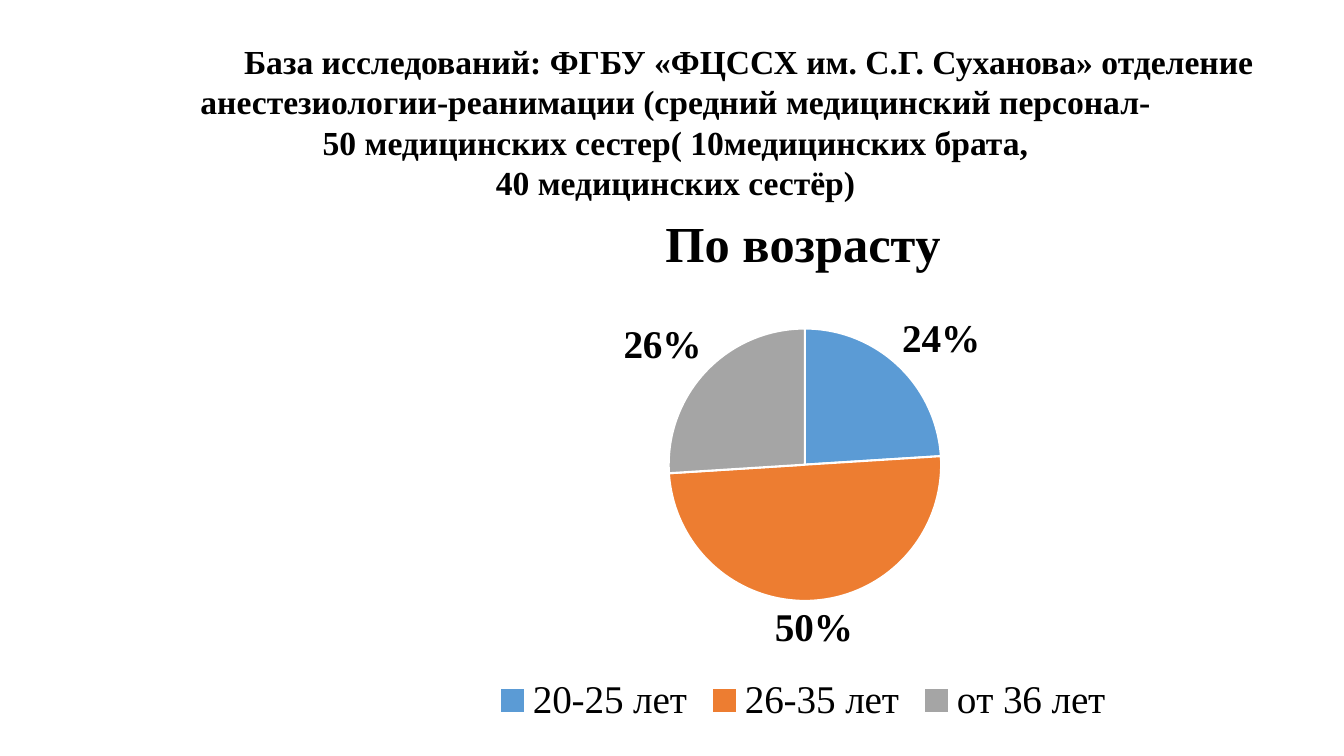
from pptx import Presentation
from pptx.chart.data import CategoryChartData
from pptx.dml.color import RGBColor
from pptx.enum.chart import XL_CHART_TYPE as ChartType
from pptx.enum.chart import XL_LABEL_POSITION as LabelPos
from pptx.enum.chart import XL_LEGEND_POSITION as LegendPos
from pptx.enum.text import MSO_ANCHOR, MSO_AUTO_SIZE, PP_ALIGN
from pptx.util import Inches, Pt

BLACK = RGBColor(0x00, 0x00, 0x00)
WHITE = RGBColor(0xFF, 0xFF, 0xFF)
BLUE = RGBColor(0x5B, 0x9B, 0xD5)
ORANGE = RGBColor(0xED, 0x7D, 0x31)
GRAY = RGBColor(0xA5, 0xA5, 0xA5)

# Each paragraph with its right margin in inches
TITLE = [
    ("База исследований: ФГБУ «ФЦССХ им. С.Г. Суханова» отделение", 0),
    ("анестезиологии-реанимации (средний медицинский персонал-", 1.45),
    ("50 медицинских сестер( 10медицинских брата,\v40 медицинских сестёр)", 0),
]
AGE_GROUPS = [
    ("20-25 лет", 0.24, BLUE),
    ("26-35 лет", 0.5, ORANGE),
    ("от 36 лет", 0.26, GRAY),
]


class SlideBuilder:
    font_name = "Times New Roman"

    def __init__(self, prs):
        self.s = prs.slides.add_slide(prs.slide_layouts[5])

    def style(self, font, size, bold=False):
        font.name = self.font_name
        font.size = Pt(size)
        font.bold = bold
        font.color.rgb = BLACK

    def title(self, paragraphs, box, size):
        sp = self.s.shapes.title
        sp.left, sp.top, sp.width, sp.height = map(Inches, box)
        tf = sp.text_frame
        tf.word_wrap = True
        tf.auto_size = MSO_AUTO_SIZE.NONE
        tf.vertical_anchor = MSO_ANCHOR.MIDDLE
        for i, (text, right_margin) in enumerate(paragraphs):
            p = tf.add_paragraph() if i else tf.paragraphs[0]
            p.text = text
            p.alignment = PP_ALIGN.CENTER
            p.space_before = Pt(0)
            if right_margin:
                p._p.get_or_add_pPr().set("marR", str(Inches(right_margin)))
            self.style(p.font, size, bold=True)

    def pie(self, heading, groups, box):
        names, values, colors = zip(*groups)
        data = CategoryChartData(number_format="0%")
        data.categories = names
        data.add_series(heading, values)
        chart = self.s.shapes.add_chart(ChartType.PIE, *map(Inches, box), data).chart
        chart.font.name = "Calibri"
        chart.font.size = Pt(10)
        chart.font.color.rgb = BLACK

        chart.has_title = True
        p = chart.chart_title.text_frame.paragraphs[0]
        p.text = heading
        self.style(p.font, 36, bold=True)
        chart.chart_title.include_in_layout = False

        chart.has_legend = True
        chart.legend.position = LegendPos.BOTTOM
        chart.legend.include_in_layout = False
        self.style(chart.legend.font, 28)

        plot = chart.plots[0]
        plot.vary_by_categories = True
        plot.has_data_labels = True
        labels = plot.data_labels
        labels.show_value = True
        labels.show_percentage = False
        labels.number_format = "0%"
        labels.number_format_is_linked = False
        labels.position = LabelPos.OUTSIDE_END
        self.style(labels.font, 28, bold=True)
        for i, color in enumerate(colors):
            fmt = plot.series[0].points[i].format
            fmt.fill.solid()
            fmt.fill.fore_color.rgb = color
            fmt.line.color.rgb = WHITE
            fmt.line.width = Pt(1.5)


def main():
    prs = Presentation()
    prs.slide_width, prs.slide_height = Inches(13.33), Inches(7.5)
    builder = SlideBuilder(prs)
    builder.title(TITLE, (1.73, 0.4, 11.39, 1.61), 24)
    builder.pie("По возрасту", AGE_GROUPS, (3.1, 1.85, 9.73, 5.39))
    prs.save("out.pptx")


if __name__ == "__main__":
    main()
